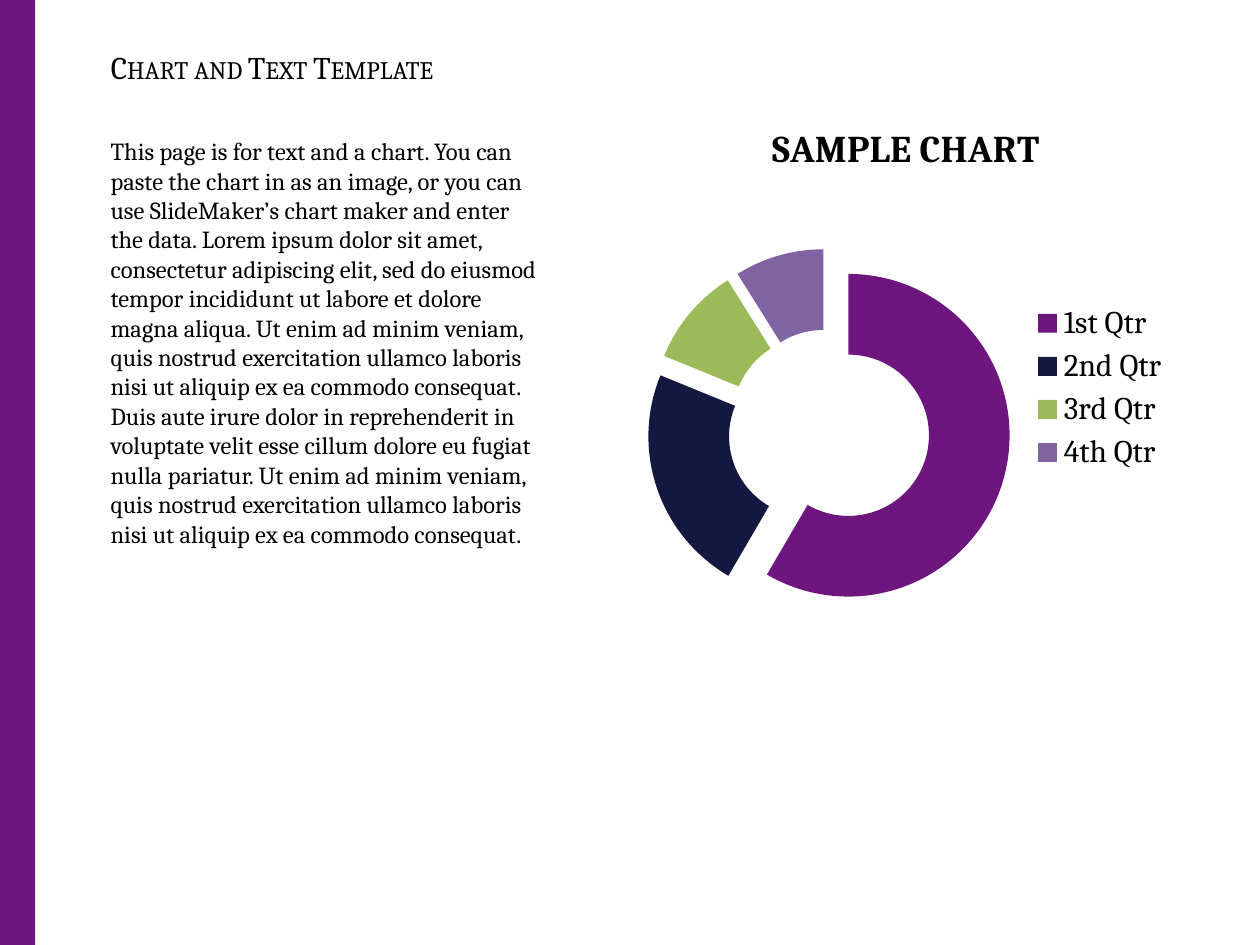
from lxml import etree
from pptx import Presentation
from pptx import util as u
from pptx.chart.data import CategoryChartData
from pptx.dml.color import RGBColor
from pptx.enum import chart as charts, shapes, text
from pptx.oxml.ns import qn

FONT = "Cambria"
PURPLE, BLACK = "6C167E", "000000"
QUARTERS = {  # name: (value, colour)
    "1st Qtr": (59, PURPLE),
    "2nd Qtr": (23, "131840"),
    "3rd Qtr": (10, "9BBB59"),
    "4th Qtr": (9, "8064A2"),
}
BODY = (
    "This page is for text and a chart. You can paste the chart in as an image, "
    "or you can use SlideMaker’s chart maker and enter the data. Lorem ipsum dolor "
    "sit amet, consectetur adipiscing elit, sed do eiusmod tempor incididunt ut "
    "labore et dolore magna aliqua. Ut enim ad minim veniam, quis nostrud "
    "exercitation ullamco laboris nisi ut aliquip ex ea commodo consequat. Duis "
    "aute irure dolor in reprehenderit in voluptate velit esse cillum dolore eu "
    "fugiat nulla pariatur. Ut enim ad minim veniam, quis nostrud exercitation "
    "ullamco laboris nisi ut aliquip ex ea commodo consequat."
)


def color(value):
    return RGBColor.from_string(value)


def set_font(font, size, bold=False):
    for name, value in {"name": FONT, "size": u.Pt(size), "bold": bold}.items():
        setattr(font, name, value)
    font.color.rgb = color(BLACK)


def place(shape, left, top, width, height):
    box = {"left": left, "top": top, "width": width, "height": height}
    for name, value in box.items():
        setattr(shape, name, u.Cm(value))


def write(box, words, size):
    """Fill a text box with one left-aligned paragraph."""
    frame = box.text_frame
    layout = {"word_wrap": True, "vertical_anchor": text.MSO_ANCHOR.TOP,
              "auto_size": text.MSO_AUTO_SIZE.SHAPE_TO_FIT_TEXT}
    for name, value in layout.items():
        setattr(frame, name, value)
    para = frame.paragraphs[0]
    para.alignment = text.PP_ALIGN.LEFT
    span = para.add_run()
    span.text = words
    set_font(span.font, size)
    return span


def add_side_bar(page, width, height):
    bar = page.shapes.add_shape(shapes.MSO_SHAPE.RECTANGLE, 0, 0, width, height)
    bar.shadow.inherit = False
    bar.fill.solid()
    bar.fill.fore_color.rgb = color(PURPLE)
    bar.line.fill.background()


def add_doughnut(page, title, left, top, width, height):
    data = CategoryChartData()
    data.categories = list(QUARTERS)
    data.add_series(title, [value for value, _ in QUARTERS.values()])
    frame = page.shapes.add_chart(
        charts.XL_CHART_TYPE.DOUGHNUT_EXPLODED,
        u.Cm(left), u.Cm(top), u.Cm(width), u.Cm(height), data)
    chart = frame.chart
    set_font(chart.font, 18)

    # Title and legend
    chart.has_title = True
    span = chart.chart_title.text_frame.paragraphs[0].add_run()
    span.text = title
    set_font(span.font, 21.6, bold=True)
    chart.has_legend = True
    chart.legend.position = charts.XL_LEGEND_POSITION.RIGHT
    chart.legend.include_in_layout = False

    # Slices: one colour each, all pulled out by the same amount
    plot = chart.plots[0]
    plot.vary_by_categories = True
    plot.has_data_labels = False
    series = plot.series[0]
    for index, (_, fill) in enumerate(QUARTERS.values()):
        slice_fill = series.points[index].format.fill
        slice_fill.solid()
        slice_fill.fore_color.rgb = color(fill)
    for old in series._element.findall(qn("c:explosion")):
        series._element.remove(old)
    explosion = etree.Element(qn("c:explosion"), val="25")
    series._element.find(qn("c:dPt")).addprevious(explosion)


def main():
    deck = Presentation()
    deck.slide_width, deck.slide_height = u.Cm(25.4), u.Cm(19.05)
    page = deck.slides.add_slide(deck.slide_layouts[5])

    add_side_bar(page, u.Cm(0.71), deck.slide_height)

    # Heading in small capitals
    heading = page.shapes.title
    place(heading, 1.98, 0.84, 13.72, 1.02)
    span = write(heading, "Chart and Text Template", 18)
    span.font._element.set("cap", "small")

    # Body text on the left, chart on the right
    body = page.shapes.add_textbox(0, 0, 0, 0)
    place(body, 1.98, 2.62, 9.14, 10.44)
    write(body, BODY, 14)
    add_doughnut(page, "SAMPLE CHART", 12.7, 1.98, 11.13, 11.68)

    deck.save("out.pptx")


if __name__ == "__main__":
    main()
